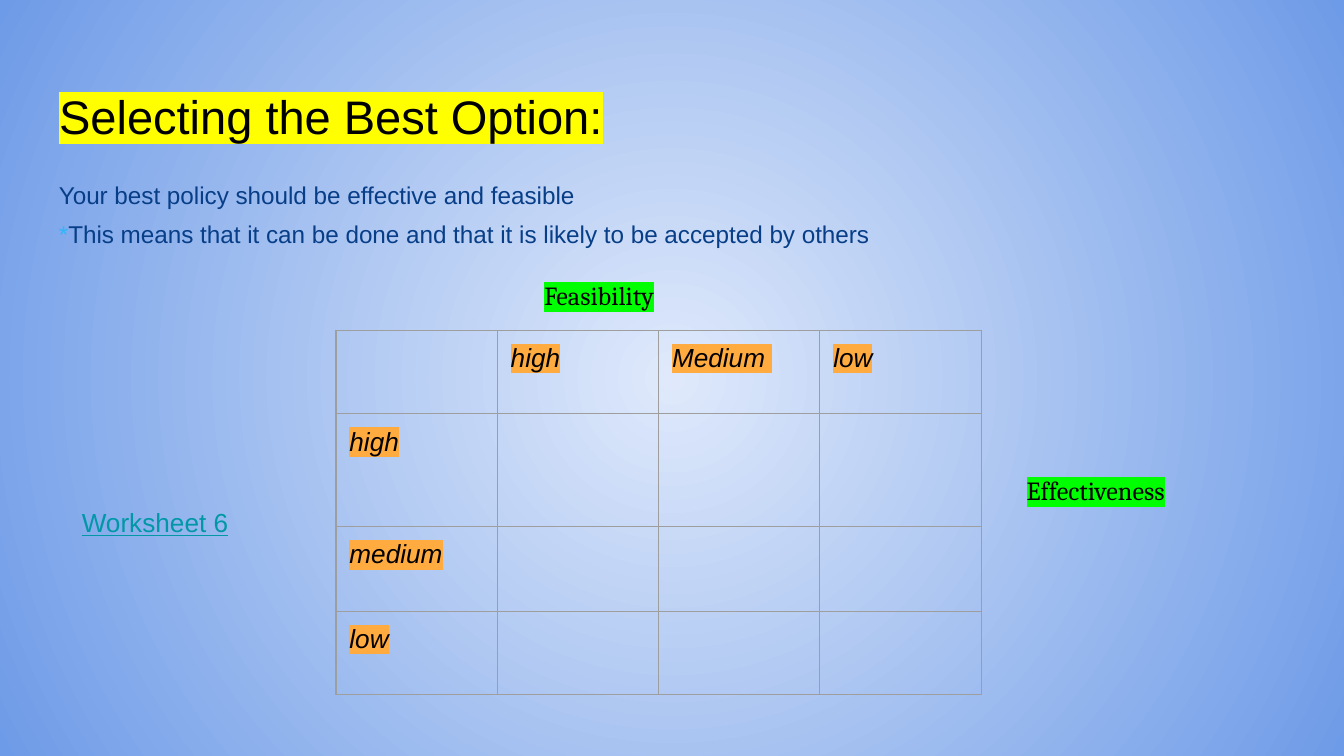
from dataclasses import dataclass
from typing import Optional

from lxml import etree
from pptx import Presentation
from pptx import util as u
from pptx.dml.color import RGBColor
from pptx.enum import text as t
from pptx.oxml.ns import qn

PX = 9144  # EMU per px, 100 px to the inch
INSET = 10 * PX
COLORS = {
    "center": "DFE9FB", "edge": "6E9BE7", "black": "000000", "navy": "073E87",
    "sky": "31B6FD", "teal": "0097A7", "yellow": "FFFF00", "green": "00FF00",
    "orange": "FFAB40", "border": "9E9E9E",
}


@dataclass
class Label:
    text: str
    box: tuple[int, int, int, int]
    font: str
    color: str = "black"
    highlight: Optional[str] = None
    underline: bool = False


LABELS = [
    Label("Effectiveness", (754, 343, 155, 23), "Cambria", highlight="green"),
    Label("Feasibility", (395, 198, 178, 44), "Cambria", highlight="green"),
    Label("Worksheet 6", (51, 367, 162, 44), "Arial", "teal", underline=True),
]
COLUMN_HEADS = ["high", "Medium ", "low"]
ROW_HEADS = ["high", "medium", "low"]
ROW_HEIGHTS = [62, 84, 63, 62]
COL_WIDTH = 120


def rgb(name: str) -> RGBColor:
    return RGBColor.from_string(COLORS[name])


def add_color(parent, name: str) -> None:
    etree.SubElement(parent, qn("a:srgbClr"), val=COLORS[name])


def add_text(p, text: str, *, size: float = 14, font: str = "Arial",
             color: str = "black", highlight: Optional[str] = None,
             italic: bool = False, underline: bool = False) -> None:
    r = p.add_run()
    r.text = text
    f = r.font
    f.size, f.name, f.italic, f.underline = u.Pt(size), font, italic, underline
    f.color.rgb = rgb(color)
    if highlight:
        mark = etree.Element(qn("a:highlight"))
        add_color(mark, highlight)
        r.font._element.find(qn("a:solidFill")).addnext(mark)


def set_frame(sp, box: tuple[int, int, int, int], anchor=t.MSO_ANCHOR.TOP):
    sp.left, sp.top, sp.width, sp.height = (v * PX for v in box)
    tf = sp.text_frame
    tf.word_wrap = True
    tf.auto_size = t.MSO_AUTO_SIZE.NONE
    tf.vertical_anchor = anchor
    tf.margin_left = tf.margin_right = tf.margin_top = tf.margin_bottom = INSET
    return tf


def add_box(s, box: tuple[int, int, int, int]):
    return set_frame(s.shapes.add_textbox(0, 0, 0, 0), box)


def format_cell(cell) -> None:
    cell.margin_left = cell.margin_right = INSET
    cell.margin_top = cell.margin_bottom = INSET
    cell.fill.background()
    tcPr = cell._tc.get_or_add_tcPr()
    for i, side in enumerate(("a:lnL", "a:lnR", "a:lnT", "a:lnB")):
        ln = etree.Element(qn(side), w=str(u.Pt(0.75)))
        add_color(etree.SubElement(ln, qn("a:solidFill")), "border")
        tcPr.insert(i, ln)


def set_background(s) -> None:
    fill = s.background.fill
    fill.gradient()
    for stop, name in zip(fill.gradient_stops, ("center", "edge")):
        stop.color.rgb = rgb(name)
    lin = next(s.element.iter(qn("a:lin")))
    radial = etree.Element(qn("a:path"), path="circle")
    etree.SubElement(radial, qn("a:fillToRect"), l="50000", t="50000",
                     r="50000", b="50000")
    lin.getparent().replace(lin, radial)


def add_matrix(s) -> None:
    n = len(ROW_HEIGHTS)
    frame = s.shapes.add_table(n, n, 250 * PX, 246 * PX, n * COL_WIDTH * PX,
                               sum(ROW_HEIGHTS) * PX)
    table = frame.table
    table.first_row = table.horz_banding = False
    for column in table.columns:
        column.width = COL_WIDTH * PX
    for row, height in zip(table.rows, ROW_HEIGHTS):
        row.height = height * PX
    for cell in table.iter_cells():
        format_cell(cell)
    heads = [(0, i, h) for i, h in enumerate(COLUMN_HEADS, 1)]
    heads += [(i, 0, h) for i, h in enumerate(ROW_HEADS, 1)]
    for row, col, head in heads:
        add_text(table.cell(row, col).text_frame.paragraphs[0], head,
                 italic=True, highlight="orange")


def main() -> None:
    prs = Presentation()
    prs.slide_width, prs.slide_height = u.Inches(10), u.Inches(5.625)
    s = prs.slides.add_slide(prs.slide_layouts[5])
    set_background(s)

    # Title
    tf = set_frame(s.shapes.title, (34, 54, 932, 63), t.MSO_ANCHOR.BOTTOM)
    p = tf.paragraphs[0]
    p.alignment = t.PP_ALIGN.LEFT
    add_text(p, "Selecting the Best Option:", size=25.2, highlight="yellow")

    # Explanation
    tf = add_box(s, (34, 126, 856, 87))
    first, second = tf.paragraphs[0], tf.add_paragraph()
    first.line_spacing = second.line_spacing = 0.95
    second.space_before = u.Pt(6)
    add_text(first, "Your best policy should be effective and feasible",
             size=13, color="navy")
    add_text(second, "*", size=13, color="sky")
    add_text(second, "This means that it can be done and that it is likely "
             "to be accepted by others", size=13, color="navy")

    # Matrix and its labels
    add_matrix(s)
    for label in LABELS:
        add_text(add_box(s, label.box).paragraphs[0], label.text,
                 font=label.font, color=label.color,
                 highlight=label.highlight, underline=label.underline)

    prs.save("out.pptx")


if __name__ == "__main__":
    main()
